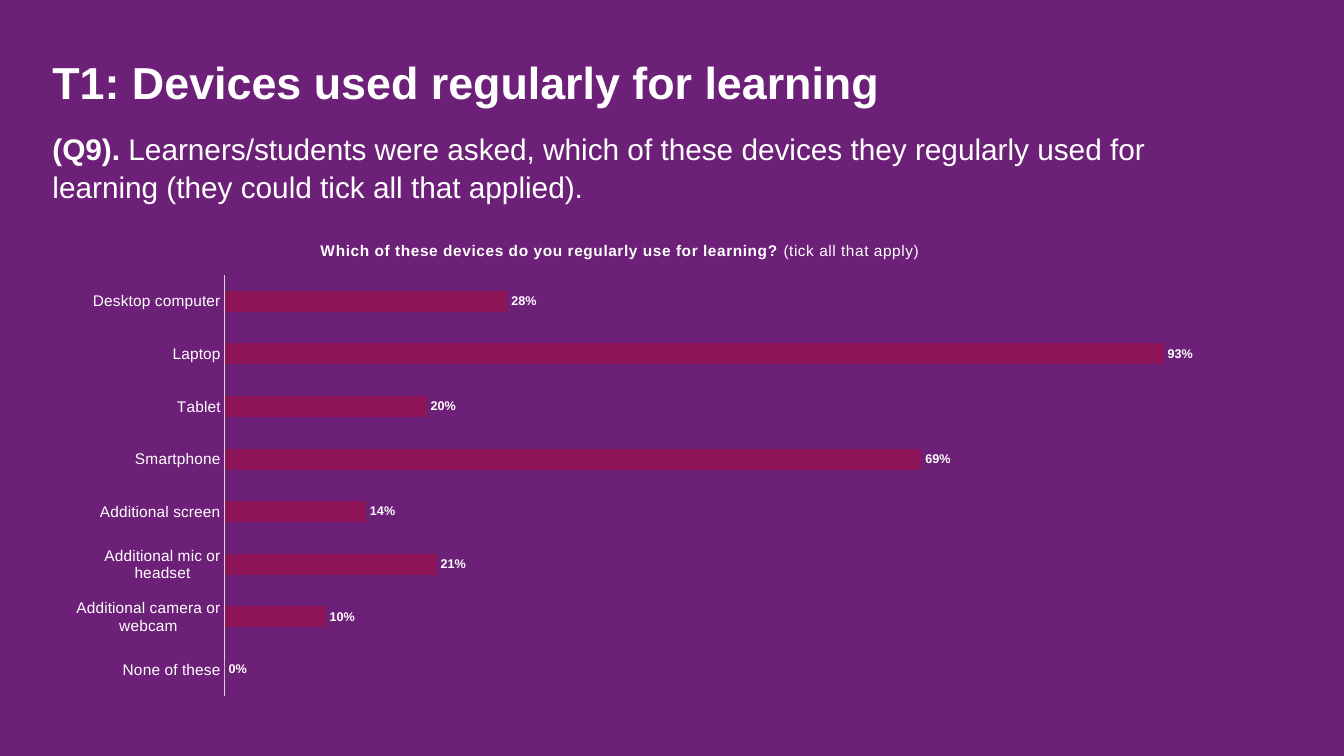
from dataclasses import dataclass
from typing import Any

from lxml import etree
from pptx import Presentation
from pptx.chart import data as cd
from pptx.dml.color import RGBColor
from pptx.enum import chart as ce
from pptx.oxml import ns
from pptx.util import Inches, Pt


@dataclass(frozen=True)
class Theme:
    background: str = "6D2077"
    ink: str = "FFFFFF"
    bar: str = "8E1558"
    axis: str = "D9D9D9"
    font: str = "Arial"
    title: float = 32
    body: float = 21.3
    chart: float = 11
    label: float = 9


@dataclass(frozen=True)
class Run:
    text: str
    bold: bool = False


@dataclass(frozen=True)
class TextBlock:
    left: float
    top: float
    width: float
    height: float
    size: float
    line_spacing: float
    runs: tuple[Run, ...]


THEME = Theme()
BLOCKS = (
    TextBlock(0.52, 0.5, 9.5, 0.5, THEME.title, 1.08,
              (Run("T1: Devices used regularly for learning", True),)),
    TextBlock(0.52, 1.28, 11.95, 0.92, THEME.body, 1.05,
              (Run("(Q9). ", True),
               Run("Learners/students were asked, which of these devices they "
                   "regularly used for learning (they could tick all that applied)."))),
)
CHART_TITLE = (
    Run("Which of these devices do you regularly use for learning? ", True),
    Run("(tick all that apply)"),
)
DEVICES = {
    "Desktop computer": 0.28,
    "Laptop": 0.93,
    "Tablet": 0.2,
    "Smartphone": 0.69,
    "Additional screen": 0.14,
    "Additional mic or headset": 0.21,
    "Additional camera or webcam": 0.1,
    "None of these": 0,
}


def set_all(target: Any, values: dict[str, Any]) -> None:
    for name, value in values.items():
        setattr(target, name, value)


def style_font(font: Any, size: float, bold: bool) -> None:
    set_all(font, {"name": THEME.font, "size": Pt(size), "bold": bold})
    font.color.rgb = RGBColor.from_string(THEME.ink)


def add_runs(p: Any, runs: tuple[Run, ...], size: float) -> None:
    for run in runs:
        r = p.add_run()
        r.text = run.text
        style_font(r.font, size, run.bold)


def add_block(slide: Any, block: TextBlock) -> None:
    sp = slide.shapes.add_textbox(*map(Inches, (block.left, block.top, block.width, block.height)))
    tf = sp.text_frame
    set_all(tf, {"word_wrap": True, "margin_left": 0, "margin_right": 0,
                 "margin_top": 0, "margin_bottom": 0})
    p = tf.paragraphs[0]
    p.line_spacing = block.line_spacing
    add_runs(p, block.runs, block.size)


def place(parent: Any, values: dict[str, Any]) -> None:
    for old in parent.findall(ns.qn("c:layout")):
        parent.remove(old)
    layout = etree.Element(ns.qn("c:layout"))
    manual = etree.SubElement(layout, ns.qn("c:manualLayout"))
    for name, value in values.items():
        etree.SubElement(manual, ns.qn(f"c:{name}")).set("val", str(value))
    tx = parent.find(ns.qn("c:tx"))
    parent.insert(0 if tx is None else parent.index(tx) + 1, layout)


def add_device_chart(slide: Any) -> None:
    data = cd.CategoryChartData(number_format="0%")
    data.categories = list(DEVICES)
    data.add_series("Series 1", list(DEVICES.values()))
    frame = slide.shapes.add_chart(ce.XL_CHART_TYPE.BAR_CLUSTERED,
                                   *map(Inches, (0.52, 2.2, 11.95, 4.8)), data)
    chart = frame.chart
    set_all(chart, {"has_legend": False, "has_title": True})
    style_font(chart.font, THEME.chart, False)

    title = chart.chart_title
    title.include_in_layout = False
    add_runs(title.text_frame.paragraphs[0], CHART_TITLE, THEME.chart)
    for r in title.text_frame.paragraphs[0].runs:
        r.font._element.set("spc", "30")
    place(title._element, {"xMode": "edge", "yMode": "edge", "x": 0.22, "y": 0.03})
    place(chart._chartSpace.chart.plotArea,
          {"layoutTarget": "inner", "xMode": "edge", "yMode": "edge",
           "x": 0.143, "y": 0.11, "w": 0.838, "h": 0.87})

    axis = chart.category_axis
    set_all(axis, {"reverse_order": True, "has_major_gridlines": False,
                   "major_tick_mark": ce.XL_TICK_MARK.NONE,
                   "minor_tick_mark": ce.XL_TICK_MARK.NONE})
    style_font(axis.tick_labels.font, THEME.chart, False)
    axis.format.line.color.rgb = RGBColor.from_string(THEME.axis)
    axis.format.line.width = Pt(0.75)
    set_all(chart.value_axis, {"visible": False, "has_major_gridlines": False,
                               "minimum_scale": 0, "maximum_scale": 1})

    plot = chart.plots[0]
    set_all(plot, {"gap_width": 150, "vary_by_categories": False})
    series = plot.series[0]
    series.format.fill.solid()
    series.format.fill.fore_color.rgb = RGBColor.from_string(THEME.bar)
    labels = series.data_labels
    set_all(labels, {"show_value": True, "number_format": "0%",
                     "number_format_is_linked": False,
                     "position": ce.XL_LABEL_POSITION.OUTSIDE_END})
    style_font(labels.font, THEME.label, True)


def main() -> None:
    prs = Presentation()
    set_all(prs, {"slide_width": Inches(13.33), "slide_height": Inches(7.5)})
    slide = prs.slides.add_slide(prs.slide_layouts[6])
    fill = slide.background.fill
    fill.solid()
    fill.fore_color.rgb = RGBColor.from_string(THEME.background)
    for block in BLOCKS:
        add_block(slide, block)
    add_device_chart(slide)
    prs.save("out.pptx")


if __name__ == "__main__":
    main()
